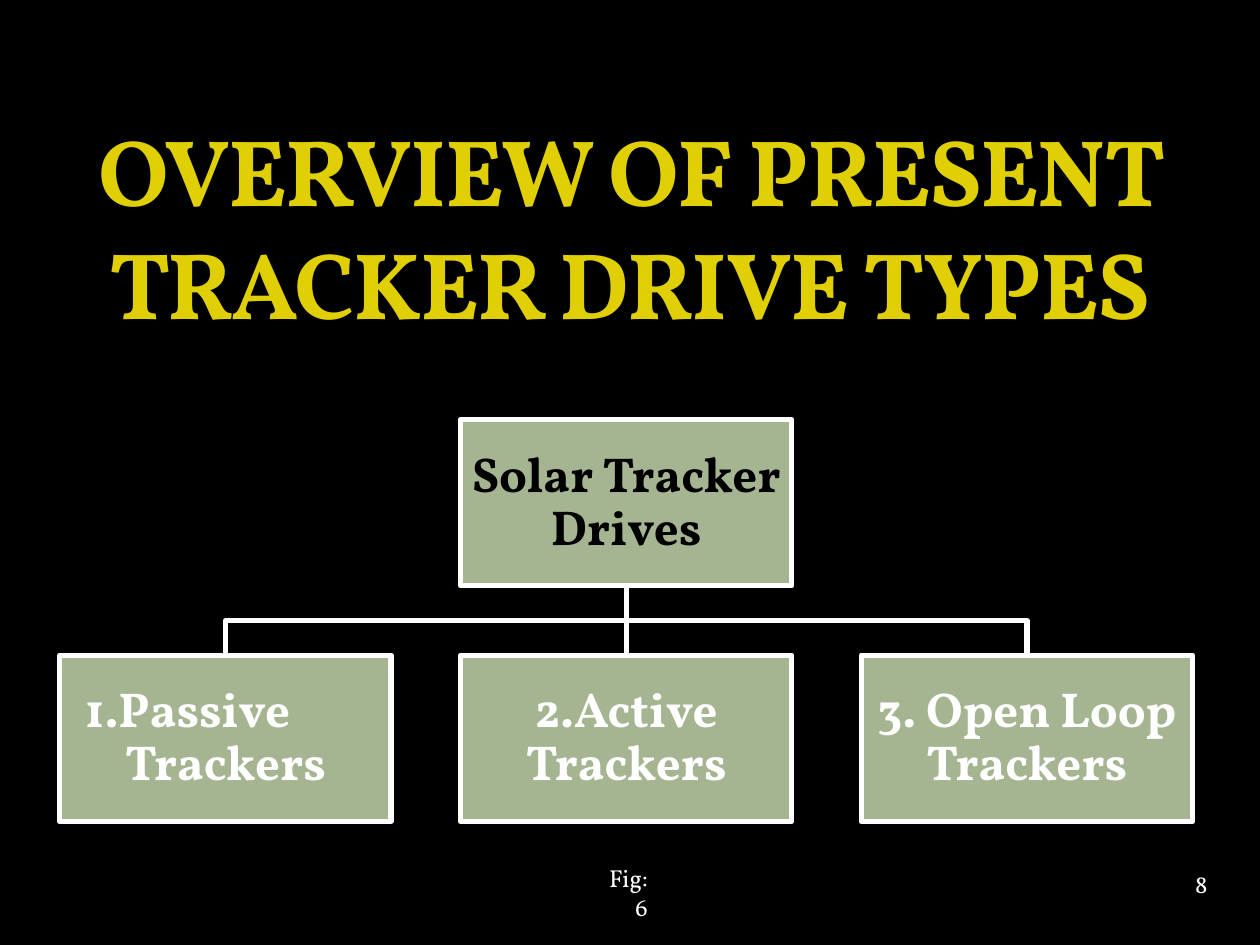
"""Build the slide on solar tracker drive types with its hierarchy chart."""
import dataclasses

import pptx
import pptx.dml.color
import pptx.enum.shapes
import pptx.enum.text
import pptx.oxml
import pptx.util

Inches = pptx.util.Inches
Align = pptx.enum.text.PP_ALIGN
Anchor = pptx.enum.text.MSO_ANCHOR


@dataclasses.dataclass(frozen=True)
class Theme:
    font: str = "Vollkorn"
    black: str = "000000"
    white: str = "FFFFFF"
    yellow: str = "DFCF04"
    green: str = "A5B592"
    title_size: int = 54
    box_size: int = 28
    note_size: int = 14
    line_width: int = 3


theme = Theme()


def rgb(value):
    return pptx.dml.color.RGBColor.from_string(value)


def write(frame, lines, size, color, bold=False, align=Align.CENTER,
          anchor=Anchor.MIDDLE, inset=0.0, spacing=None):
    frame.word_wrap = True
    frame.auto_size = pptx.enum.text.MSO_AUTO_SIZE.NONE
    frame.vertical_anchor = anchor
    frame.margin_left = frame.margin_right = Inches(inset)
    frame.margin_top = frame.margin_bottom = Inches(min(inset, 0.05))
    for index, line in enumerate(lines):
        para = frame.add_paragraph() if index else frame.paragraphs[0]
        para.alignment = align
        para.line_spacing = spacing
        span = para.add_run()
        span.text = line
        span.font.name = theme.font
        span.font.size = pptx.util.Pt(size)
        span.font.bold = bold
        span.font.color.rgb = rgb(color)


deck = pptx.Presentation()
deck.slide_width, deck.slide_height = Inches(10), Inches(7.5)
slide = deck.slides.add_slide(deck.slide_layouts[5])
slide.background.fill.solid()
slide.background.fill.fore_color.rgb = rgb(theme.black)

title = slide.shapes.title
title.left, title.top = Inches(0.5), Inches(0.86)
title.width, title.height = Inches(9), Inches(1.88)
write(title.text_frame, ["OVERVIEW OF PRESENT TRACKER DRIVE TYPES"],
      theme.title_size, theme.yellow, bold=True, anchor=Anchor.BOTTOM, inset=0.1)
title_span = title.text_frame.paragraphs[0].runs[0]
title_span.font._element.set("spc", "-100")

box_width, box_height = 2.63, 1.32
root_top, child_top = 3.33, 5.2
center, column_step = 4.97, 3.18
root_bottom = root_top + box_height
middle = (root_bottom + child_top) / 2

for side in (1, -1):
    end = center + side * column_step
    builder = slide.shapes.build_freeform(Inches(center), Inches(root_bottom))
    corners = [(center, middle), (end, middle), (end, child_top)]
    builder.add_line_segments([(Inches(x), Inches(y)) for x, y in corners], close=False)
    branch = builder.convert_to_shape()
    branch.shadow.inherit = False
    branch.fill.background()
    branch.line.color.rgb = rgb(theme.white)
    branch.line.width = pptx.util.Pt(theme.line_width)

stem = slide.shapes.add_connector(
    pptx.enum.shapes.MSO_CONNECTOR.STRAIGHT,
    Inches(center), Inches(root_bottom), Inches(center), Inches(child_top))
stem.line.color.rgb = rgb(theme.white)
stem.line.width = pptx.util.Pt(theme.line_width)
stem._element.spPr.append(pptx.oxml.parse_xml(
    '<a:effectLst xmlns:a="http://schemas.openxmlformats.org/drawingml/2006/main"/>'))

drives = [
    (0, root_top, ["Solar Tracker Drives"], theme.black),
    (-1, child_top, ["1.Passive", "Trackers"], theme.white),
    (0, child_top, ["2.Active Trackers"], theme.white),
    (1, child_top, ["3. Open Loop Trackers"], theme.white),
]
for column, top, lines, color in drives:
    left = center + column * column_step - box_width / 2
    box = slide.shapes.add_shape(
        pptx.enum.shapes.MSO_SHAPE.RECTANGLE,
        Inches(left), Inches(top), Inches(box_width), Inches(box_height))
    box.shadow.inherit = False
    box.fill.solid()
    box.fill.fore_color.rgb = rgb(theme.green)
    box.line.color.rgb = rgb(theme.white)
    box.line.width = pptx.util.Pt(theme.line_width)
    write(box.text_frame, lines, theme.box_size, color, bold=True, inset=0.02, spacing=0.9)
    if len(lines) > 1:
        first = box.text_frame.paragraphs[0]
        first.alignment = Align.LEFT
        first._p.get_or_add_pPr().set("marL", str(Inches(0.18)))

notes = [
    ("8", 9.2, 6.76, 0.67, 0.5, Align.CENTER, 0),
    ("Fig:6", 4.69, 6.88, 0.55, 0.4, Align.RIGHT, 0.1),
]
for text, left, top, width, height, align, inset in notes:
    note = slide.shapes.add_textbox(Inches(left), Inches(top), Inches(width), Inches(height))
    write(note.text_frame, [text], theme.note_size, theme.white, align=align, inset=inset)

deck.save("out.pptx")
